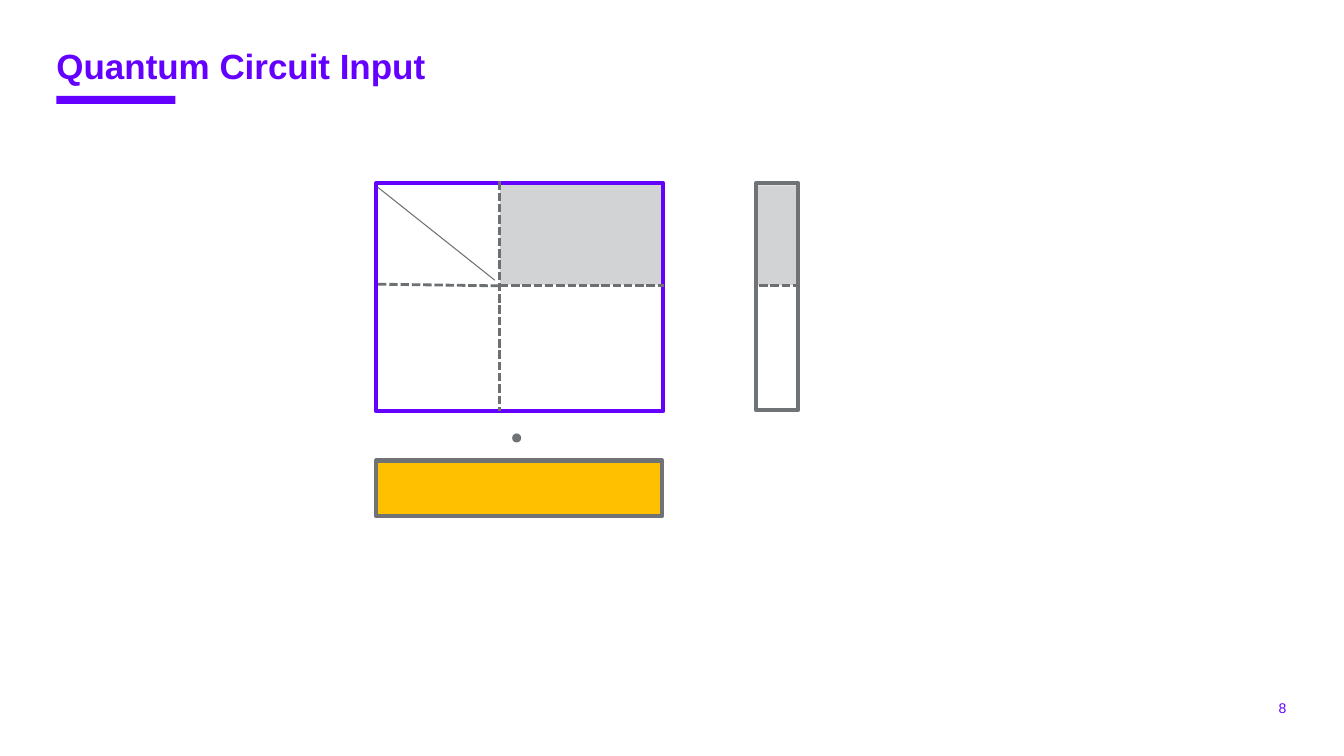
from pptx import Presentation
from pptx.dml.color import RGBColor
from pptx.enum.dml import MSO_LINE
from pptx.enum.shapes import MSO_CONNECTOR, MSO_SHAPE
from pptx.enum.text import MSO_ANCHOR, PP_ALIGN
from pptx.oxml.ns import qn
from pptx.util import Pt
from lxml.etree import SubElement

TITLE = "Quantum Circuit Input"
NUMBER = "8"
VIOLET, GREY, RULE, AMBER, WHITE = "6400FF", "6F7375", "6C7072", "FFC000", "FFFFFF"

LEFT, TOP = 268.6, 131      # corner of the matrix
STRIP, THIN = 540, 30.2     # left edge and width of the column vector
SPLIT_X, SPLIT_Y = 357.1, 204.2
SHADE = 71.3                # height of the shaded upper blocks

# left, top, width, height, fill, line, opacity in percent
BOXES = [
    (40.3, 68.4, 85, 5.8, VIOLET, None, 100),
    (LEFT, TOP, 205.2, 162.7, None, VIOLET, 100),
    (LEFT, 329, 204.5, 39.6, AMBER, GREY, 100),
    (STRIP, TOP, THIN, 162, WHITE, GREY, 100),
    (STRIP, 132.5, THIN, SHADE, GREY, None, 31),
    (SPLIT_X, 132, 115.2, SHADE, GREY, None, 31),
]
DOT = (365.8, 309.6, 6.5, 6.5, GREY, None, 100)
# x1, y1, x2, y2, width, dashed
LINES = [
    (270, 133.9, 353.5, 200.2, 0.75, False),
    (SPLIT_X, 129.6, SPLIT_X, 293.8, 2, True),
    (270, 203, SPLIT_X, SPLIT_Y, 2, True),
    (SPLIT_X, SPLIT_Y, 474.5, SPLIT_Y, 2, True),
    (542.2, SPLIT_Y, 571, SPLIT_Y, 2, True),
]


def color(code):
    return RGBColor.from_string(code)


def add_box(kind, left, top, width, height, fill, line, alpha):
    box = slide.shapes.add_shape(kind, Pt(left), Pt(top), Pt(width), Pt(height))
    box.shadow.inherit = False
    if fill:
        box.fill.solid()
        box.fill.fore_color.rgb = color(fill)
    else:
        box.fill.background()
    if alpha < 100:
        tone = box.fill._xPr.find(".//" + qn("a:srgbClr"))
        SubElement(tone, qn("a:alpha")).set("val", str(alpha * 1000))
    if line:
        box.line.color.rgb = color(line)
        box.line.width = Pt(3)
    else:
        box.line.fill.background()


def add_line(x1, y1, x2, y2, width, dashed):
    rule = slide.shapes.add_connector(
        MSO_CONNECTOR.STRAIGHT, Pt(x1), Pt(y1), Pt(x2), Pt(y2))
    rule.line.color.rgb = color(RULE)
    rule.line.width = Pt(width)
    if dashed:
        rule.line.dash_style = MSO_LINE.SQUARE_DOT
    SubElement(rule._element.spPr, qn("a:effectLst"))


def write(shape, text, size, bold, align, anchor):
    frame = shape.text_frame
    frame.margin_left = frame.margin_right = Pt(0)
    frame.margin_top = frame.margin_bottom = Pt(0)
    frame.word_wrap = True
    frame.vertical_anchor = anchor
    line = frame.paragraphs[0]
    line.text = text
    line.alignment = align
    line.font.name = "Arial"
    line.font.size = Pt(size)
    line.font.bold = bold
    line.font.color.rgb = color(VIOLET)
    return line


deck = Presentation()
deck.slide_width, deck.slide_height = Pt(960), Pt(540)
slide = deck.slides.add_slide(deck.slide_layouts[5])

title = slide.shapes.title
title.left, title.top, title.width, title.height = Pt(40.3), Pt(35.3), Pt(687.6), Pt(23.8)
head = write(title, TITLE, 25, True, PP_ALIGN.LEFT, MSO_ANCHOR.TOP)
head.line_spacing = 0.9
page = slide.shapes.add_textbox(Pt(887.8), Pt(499.7), Pt(31), Pt(11.5))
write(page, NUMBER, 10, False, PP_ALIGN.RIGHT, MSO_ANCHOR.MIDDLE)

for box in BOXES:
    add_box(MSO_SHAPE.RECTANGLE, *box)
add_box(MSO_SHAPE.OVAL, *DOT)
for line in LINES:
    add_line(*line)

deck.save("out.pptx")
